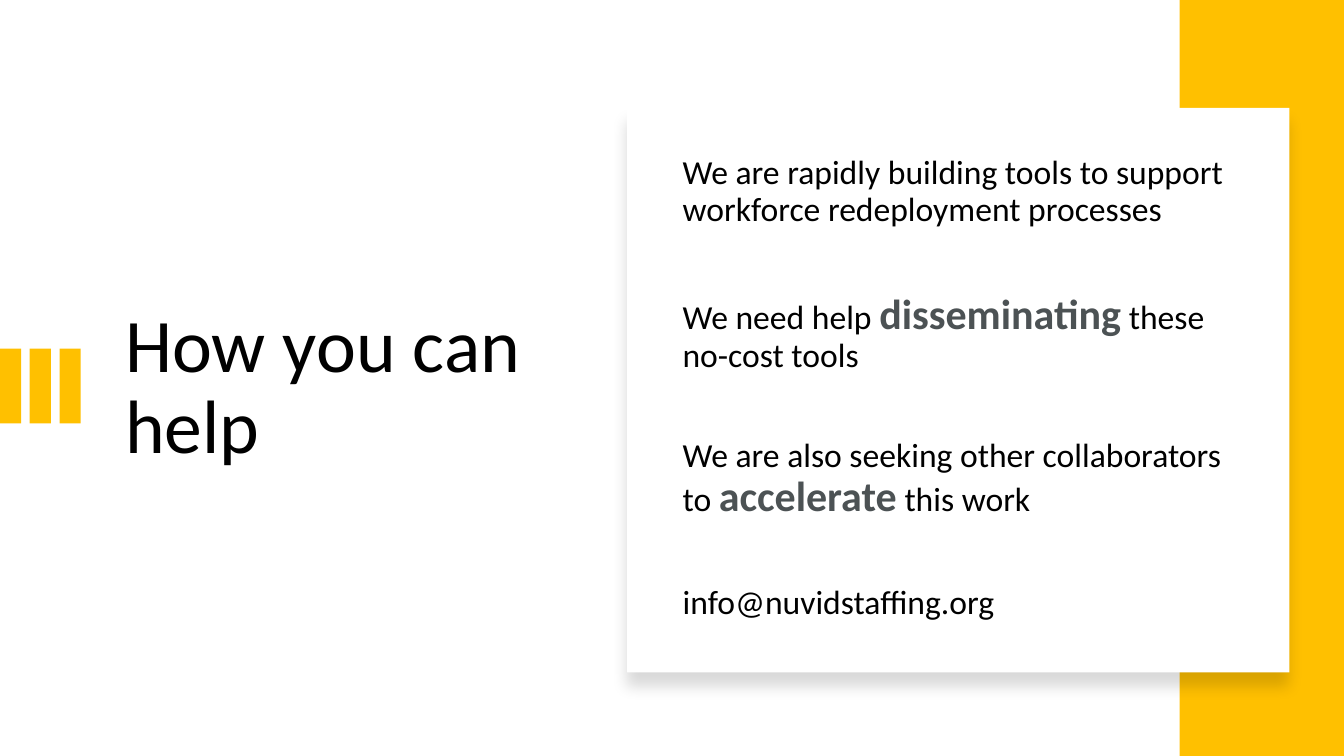
import dataclasses
import typing

import lxml.etree
import pptx
import pptx.dml.color
import pptx.enum.shapes
import pptx.enum.text
import pptx.oxml.ns
import pptx.util

Inches = pptx.util.Inches
Pt = pptx.util.Pt


@dataclasses.dataclass(frozen=True)
class Theme:
    font: str = "Calibri"
    ink: str = "000000"
    emphasis: str = "4C5254"
    accent: str = "FFC000"
    paper: str = "FFFFFF"
    title_size: int = 54
    body_size: int = 24
    emphasis_size: int = 30
    statement_gap: int = 46


@dataclasses.dataclass(frozen=True)
class Box:
    left: float
    top: float
    width: float
    height: float


class Phrase(typing.NamedTuple):
    text: str
    strong: bool = False


THEME = Theme()
HEADING_BOX = Box(1.14, 1.46, 4.26, 4.79)
STATEMENTS_BOX = Box(6.67, 1.46, 5.75, 4.79)
SIDE_BAND = Box(11.7, 0, 1.63, 7.5)
CARD = Box(6.22, 1.07, 6.57, 5.6)
STRIPES = [Box(0.295 * i, 3.46, 0.21, 0.74) for i in range(3)]

STATEMENTS: list[list[Phrase]] = [
    [Phrase("We are rapidly building tools to support workforce redeployment processes")],
    [Phrase("We need help "), Phrase("disseminating", True), Phrase(" these no-cost tools")],
    [Phrase("We are also seeking other collaborators to "), Phrase("accelerate", True),
     Phrase(" this work")],
    [Phrase("info@nuvidstaffing.org")],
]


def add_panel(slide, box: Box, color: str):
    panel = slide.shapes.add_shape(
        pptx.enum.shapes.MSO_SHAPE.RECTANGLE,
        Inches(box.left), Inches(box.top), Inches(box.width), Inches(box.height))
    panel.shadow.inherit = False
    panel.fill.solid()
    panel.fill.fore_color.rgb = pptx.dml.color.RGBColor.from_string(color)
    panel.line.fill.background()
    return panel


def add_soft_shadow(panel) -> None:
    qn = pptx.oxml.ns.qn
    effects = panel.element.spPr.find(qn("a:effectLst"))
    shadow = lxml.etree.SubElement(
        effects, qn("a:outerShdw"), blurRad=str(Pt(11)), dist=str(Pt(10)),
        dir="5400000", algn="t", rotWithShape="0")
    color = lxml.etree.SubElement(shadow, qn("a:srgbClr"), val="000000")
    lxml.etree.SubElement(color, qn("a:alpha"), val="15000")


def place_text(placeholder, box: Box):
    placeholder.left, placeholder.top = Inches(box.left), Inches(box.top)
    placeholder.width, placeholder.height = Inches(box.width), Inches(box.height)
    frame = placeholder.text_frame
    frame.word_wrap = True
    frame.auto_size = pptx.enum.text.MSO_AUTO_SIZE.NONE
    frame.vertical_anchor = pptx.enum.text.MSO_ANCHOR.MIDDLE
    return frame


def format_paragraph(paragraph, gap: int) -> None:
    paragraph.alignment = pptx.enum.text.PP_ALIGN.LEFT
    paragraph.line_spacing = 0.9
    paragraph.space_before = Pt(gap)
    properties = paragraph._p.get_or_add_pPr()
    properties.set("marL", "0")
    properties.set("indent", "0")
    lxml.etree.SubElement(properties, pptx.oxml.ns.qn("a:buNone"))


def add_run(paragraph, text: str, size: int, color: str, bold: bool = False) -> None:
    run = paragraph.add_run()
    run.text = text
    run.font.name = THEME.font
    run.font.size = Pt(size)
    run.font.bold = bold
    run.font.color.rgb = pptx.dml.color.RGBColor.from_string(color)


def main() -> None:
    deck = pptx.Presentation()
    deck.slide_width, deck.slide_height = Inches(13.33), Inches(7.5)
    slide = deck.slides.add_slide(deck.slide_layouts[1])

    # Heading
    heading = place_text(slide.shapes.title, HEADING_BOX).paragraphs[0]
    format_paragraph(heading, 0)
    add_run(heading, "How you can help", THEME.title_size, THEME.ink)

    # Stripes, side band and card
    for box in [*STRIPES, SIDE_BAND]:
        add_panel(slide, box, THEME.accent)
    card = add_panel(slide, CARD, THEME.paper)
    add_soft_shadow(card)

    # Statements, in front of the card
    statements = slide.placeholders[1]
    card.element.addnext(statements.element)
    frame = place_text(statements, STATEMENTS_BOX)
    for i, phrases in enumerate(STATEMENTS):
        paragraph = frame.add_paragraph() if i else frame.paragraphs[0]
        format_paragraph(paragraph, THEME.statement_gap if i else 0)
        for phrase in phrases:
            size = THEME.emphasis_size if phrase.strong else THEME.body_size
            color = THEME.emphasis if phrase.strong else THEME.ink
            add_run(paragraph, phrase.text, size, color, phrase.strong)

    deck.save("out.pptx")


if __name__ == "__main__":
    main()
